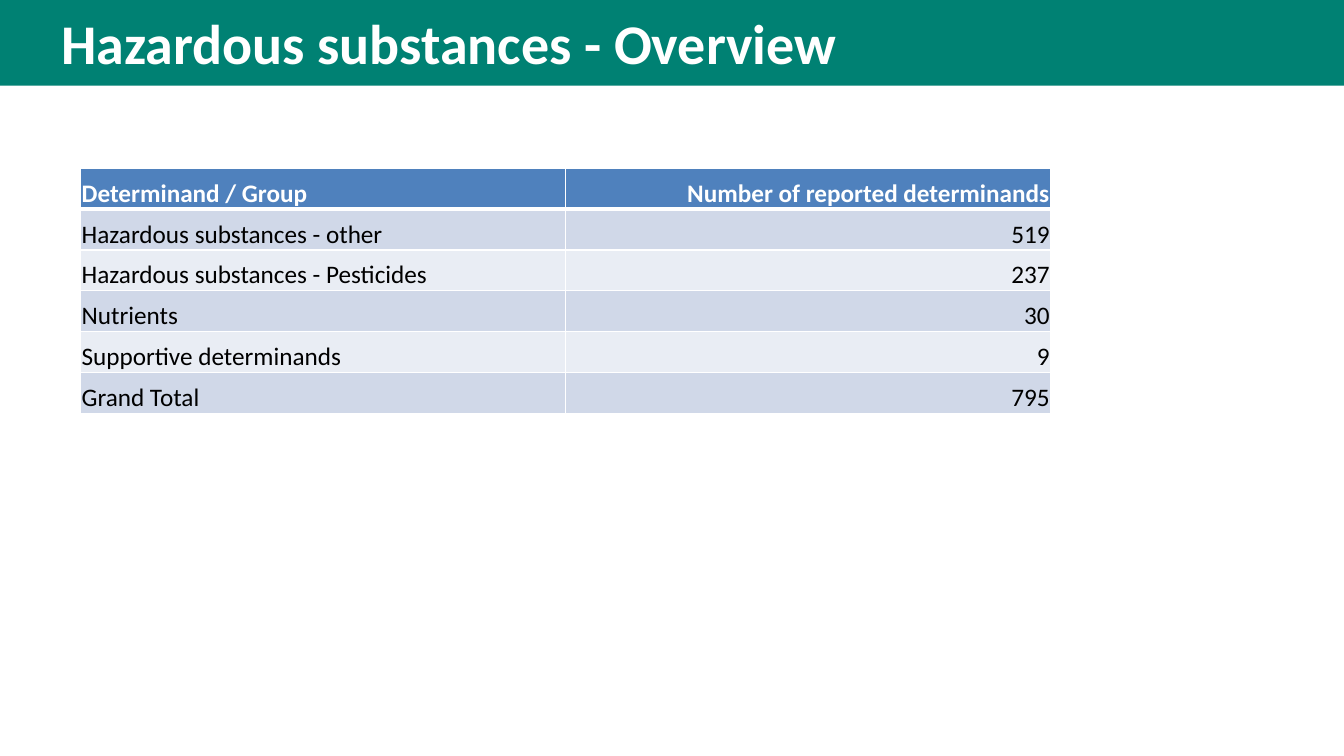
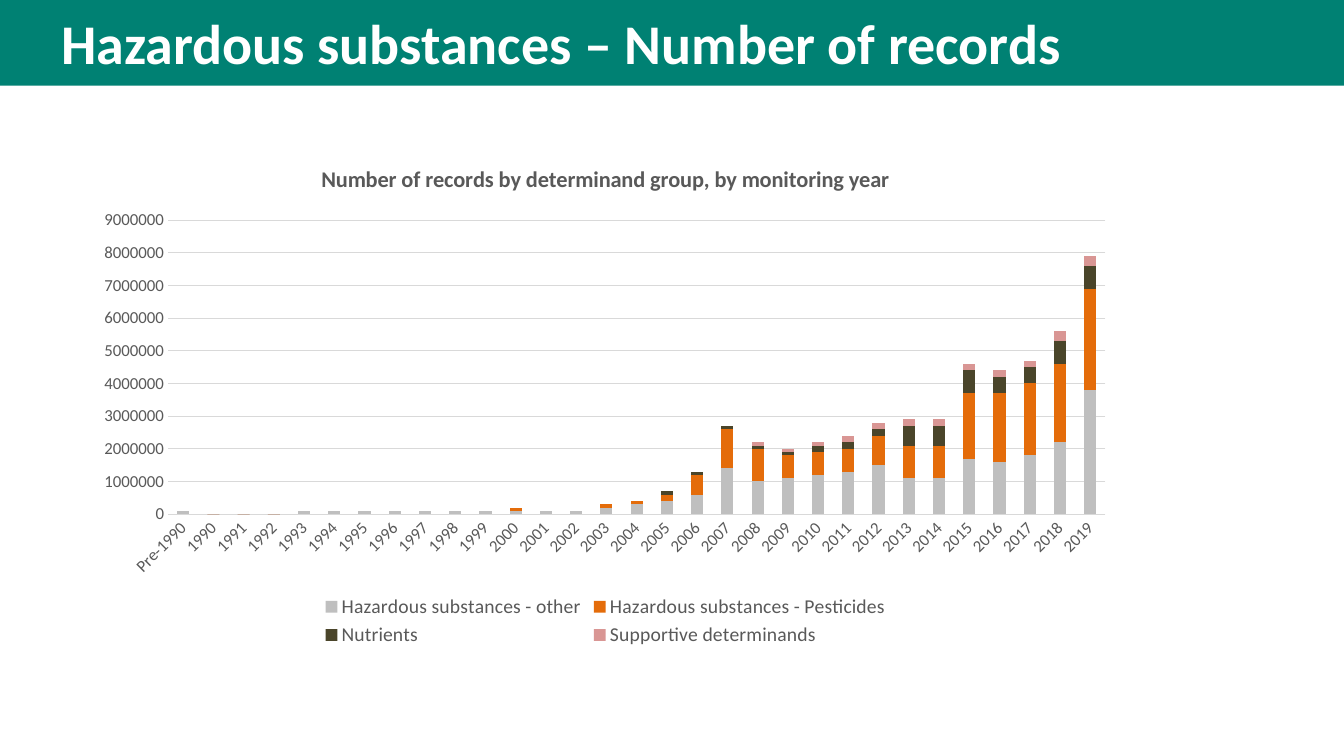
"""Build two slides on reported hazardous substances: a table and a stacked chart."""
from lxml.etree import SubElement
from pptx import Presentation
from pptx.chart.data import CategoryChartData
from pptx.dml.color import RGBColor
from pptx.enum.chart import XL_CHART_TYPE, XL_LEGEND_POSITION, XL_TICK_MARK
from pptx.enum.shapes import MSO_SHAPE
from pptx.enum.text import MSO_ANCHOR, PP_ALIGN
from pptx.oxml import parse_xml
from pptx.oxml.ns import nsdecls, qn
from pptx.util import Inches, Pt

FONT = "Calibri"
TEAL, WHITE, BLACK = "008173", "FFFFFF", "000000"
HEADER, BAND_DARK, BAND_LIGHT = "4F81BD", "D0D8E8", "E9EDF4"
GREY, GRID = "595959", "D9D9D9"


def style(font, size, color, bold=False):
    """Set the typeface, size, colour and weight of a font."""
    font.name = FONT
    font.size = Pt(size)
    font.bold = bold
    font.color.rgb = RGBColor.from_string(color)


def add_titled_slide(title):
    """Add a blank slide with the teal band and its title."""
    s = prs.slides.add_slide(prs.slide_layouts[6])
    band = s.shapes.add_shape(MSO_SHAPE.RECTANGLE, 0, 0, prs.slide_width, Inches(0.85))
    band.shadow.inherit = False
    band.fill.solid()
    band.fill.fore_color.rgb = RGBColor.from_string(TEAL)
    band.line.fill.background()
    tf = s.shapes.add_textbox(Inches(0.51), Inches(0.04), Inches(12.3), Inches(0.74)).text_frame
    tf.word_wrap = True
    tf.text = title
    style(tf.paragraphs[0].runs[0].font, 40, WHITE, True)
    return s


prs = Presentation()
prs.slide_width, prs.slide_height = Inches(13.33), Inches(7.5)

s = add_titled_slide("Hazardous substances - Overview")
rows = [
    ("Determinand / Group", "Number of reported determinands"),
    ("Hazardous substances - other", "519"),
    ("Hazardous substances - Pesticides", "237"),
    ("Nutrients", "30"),
    ("Supportive determinands", "9"),
    ("Grand Total", "795"),
]
table = s.shapes.add_table(len(rows), 2, Inches(0.8), Inches(1.67), Inches(9.62), Inches(2.43)).table
for i, row in enumerate(rows):
    fill = HEADER if i == 0 else BAND_DARK if i % 2 else BAND_LIGHT
    widths = {"lnL": 1, "lnR": 1, "lnT": 3 if i == 1 else 1, "lnB": 3 if i == 0 else 1}
    for j, text in enumerate(row):
        cell = table.cell(i, j)
        cell.margin_left = cell.margin_right = cell.margin_top = Inches(0.01)
        cell.margin_bottom = 0
        cell.vertical_anchor = MSO_ANCHOR.BOTTOM
        cell.text = text
        p = cell.text_frame.paragraphs[0]
        p.alignment = PP_ALIGN.RIGHT if j else PP_ALIGN.LEFT
        style(p.runs[0].font, 18, BLACK if i else WHITE, i == 0)
        tc_pr = cell._tc.get_or_add_tcPr()
        for side, width in widths.items():
            tc_pr.append(parse_xml(
                f'<a:{side} {nsdecls("a")} w="{Pt(width)}"><a:solidFill>'
                f'<a:srgbClr val="{WHITE}"/></a:solidFill></a:{side}>'))
        cell.fill.solid()
        cell.fill.fore_color.rgb = RGBColor.from_string(fill)

s = add_titled_slide("Hazardous substances – Number of records")
series = [
    ("Hazardous substances - other", "BFBFBF",
     [1, 0, 0, 0, 1, 1, 1, 1, 1, 1, 1, 1, 1, 1, 2, 3, 4, 6, 14, 10, 11, 12, 13, 15, 11, 11,
      17, 16, 18, 22, 38]),
    ("Hazardous substances - Pesticides", "E46C0A",
     [0, 0, 0, 0, 0, 0, 0, 0, 0, 0, 0, 1, 0, 0, 1, 1, 2, 6, 12, 10, 7, 7, 7, 9, 10, 10,
      20, 21, 22, 24, 31]),
    ("Nutrients", "4A452A",
     [0, 0, 0, 0, 0, 0, 0, 0, 0, 0, 0, 0, 0, 0, 0, 0, 1, 1, 1, 1, 1, 2, 2, 2, 6, 6,
      7, 5, 5, 7, 7]),
    ("Supportive determinands", "D99694",
     [0, 0, 0, 0, 0, 0, 0, 0, 0, 0, 0, 0, 0, 0, 0, 0, 0, 0, 0, 1, 1, 1, 2, 2, 2, 2,
      2, 2, 2, 3, 3]),
]
data = CategoryChartData(number_format="0")
data.categories = ["Pre-1990"] + [str(year) for year in range(1990, 2020)]
for name, color, hundred_thousands in series:
    data.add_series(name, [v * 100000 for v in hundred_thousands])
chart = s.shapes.add_chart(XL_CHART_TYPE.COLUMN_STACKED, Inches(0.84), Inches(1.43),
                           Inches(10.33), Inches(5.03), data).chart
style(chart.font, 12, BLACK)
chart.has_title = True
tf = chart.chart_title.text_frame
tf.text = "Number of records by determinand group, by monitoring year"
style(tf.paragraphs[0].runs[0].font, 16, GREY, True)
chart.chart_title.include_in_layout = False
chart.has_legend = True
chart.legend.position = XL_LEGEND_POSITION.BOTTOM
chart.legend.include_in_layout = False
style(chart.legend.font, 14, GREY)

plot = chart.plots[0]
plot.vary_by_categories = False
plot.gap_width, plot.overlap = 150, 100
for ser, (name, color, hundred_thousands) in zip(plot.series, series):
    ser.format.fill.solid()
    ser.format.fill.fore_color.rgb = RGBColor.from_string(color)

years, records = chart.category_axis, chart.value_axis
records.minimum_scale, records.maximum_scale, records.major_unit = 0, 9000000, 1000000
records.has_major_gridlines = True
for axis in (years, records):
    axis.major_tick_mark = axis.minor_tick_mark = XL_TICK_MARK.NONE
    style(axis.tick_labels.font, 12, GREY)
for line in (years.format.line, records.major_gridlines.format.line):
    line.width = Pt(0.75)
    line.color.rgb = RGBColor.from_string(GRID)
records.format.line.fill.background()
years._element.find(qn("c:txPr")).find(qn("a:bodyPr")).set("rot", "-2700000")

plot_area = chart._chartSpace.chart.plotArea
layout = plot_area.find(qn("c:layout"))
if layout is None:
    layout = parse_xml(f'<c:layout {nsdecls("c")}/>')
    plot_area.insert(0, layout)
manual = SubElement(layout, qn("c:manualLayout"))
for tag, val in (("layoutTarget", "inner"), ("xMode", "edge"), ("yMode", "edge"),
                 ("x", "0.08"), ("y", "0.15"), ("w", "0.9"), ("h", "0.58")):
    SubElement(manual, qn(f"c:{tag}")).set("val", val)

prs.save("out.pptx")
